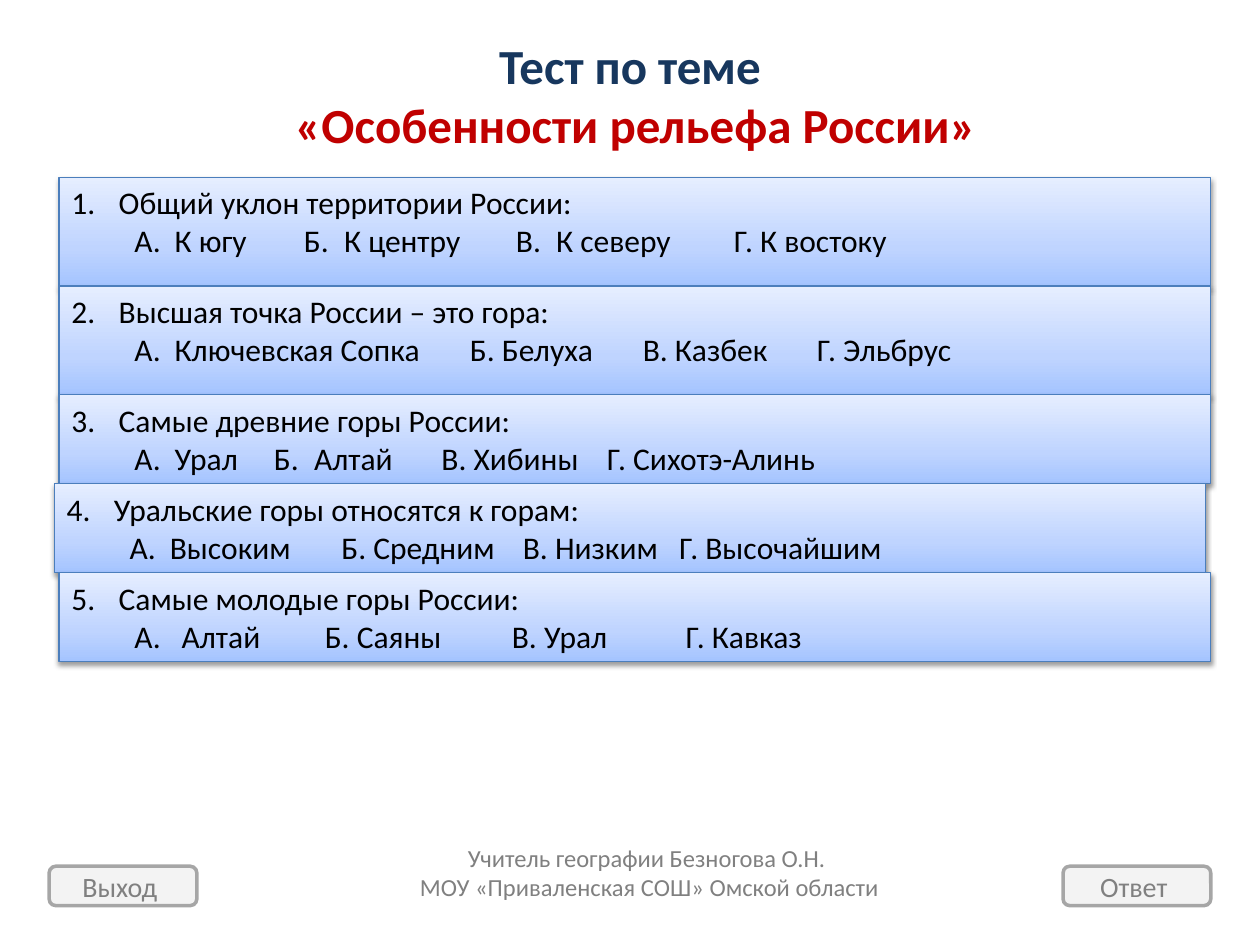
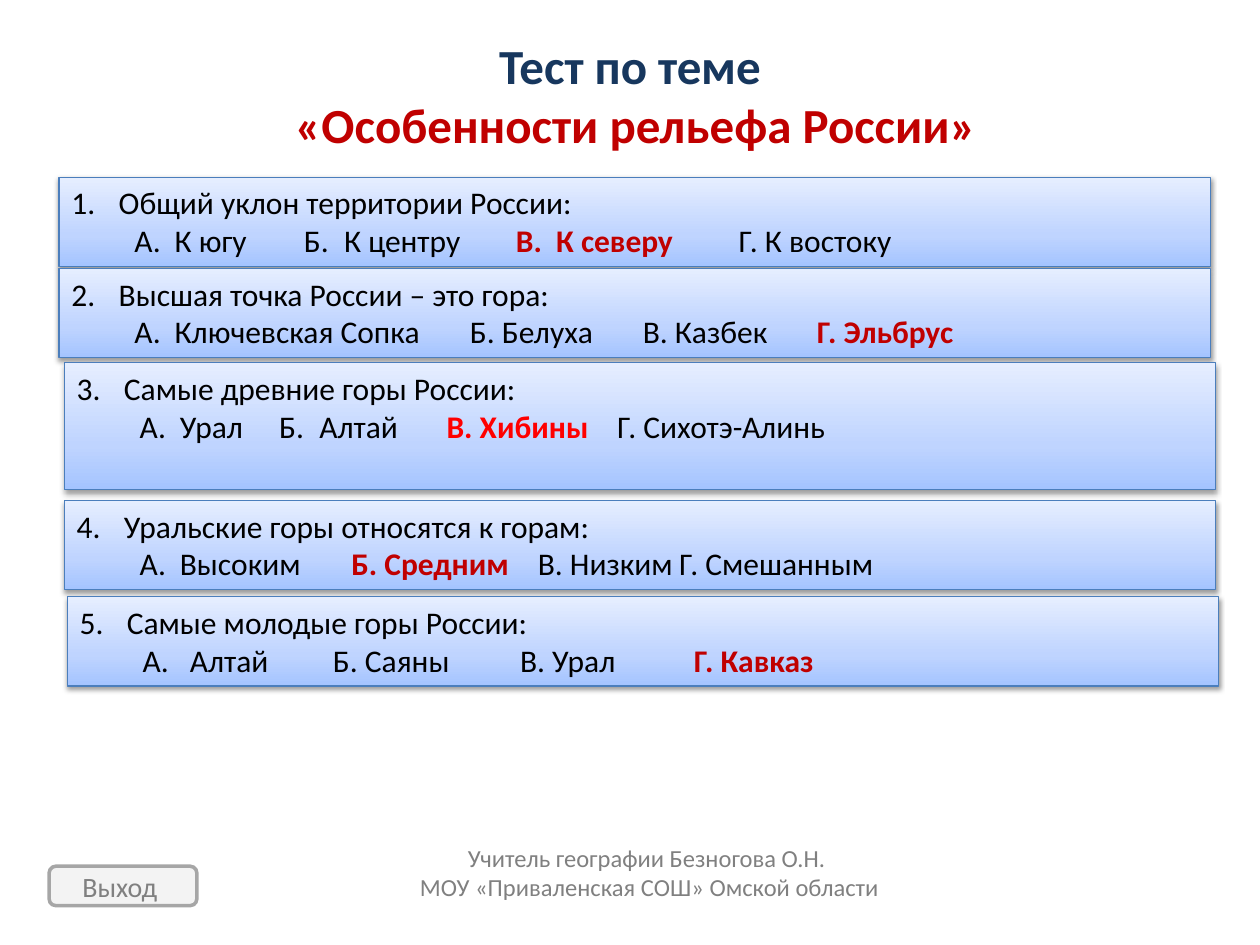
from dataclasses import dataclass, replace

from lxml import etree
from pptx import Presentation
from pptx.dml.color import RGBColor
from pptx.enum import shapes, text
from pptx.oxml import ns
from pptx.util import Pt


@dataclass(frozen=True)
class Theme:
    font: str = "Calibri"
    navy: str = "17375E"
    crimson: str = "C00000"
    red: str = "FF0000"
    ink: str = "000000"
    muted: str = "808080"
    button: str = "F2F2F2"
    button_edge: str = "A6A6A6"
    card_edge: str = "4B7EBC"
    card_stops: tuple = ((0, "A4C4FF"), (35, "BFD4FF"), (100, "E6EEFF"))
    title_size: int = 28
    question_size: int = 18
    button_size: int = 16
    footer_size: int = 14


@dataclass(frozen=True)
class Question:
    prompt: str
    options: tuple
    stops: tuple
    letter_gap: float = 23


@dataclass(frozen=True)
class Card:
    left: float
    top: float
    height: float
    correct: int | None = None
    accent: str = Theme.crimson


QUESTIONS = (
    Question("Общий уклон территории России:",
             ("А.\tК югу", "Б.\tК центру", "В.\tК северу", "Г. К востоку"),
             (36, 132.8, 254, 378.5)),
    Question("Высшая точка России – это гора:",
             ("А.\tКлючевская Сопка", "Б. Белуха", "В. Казбек", "Г. Эльбрус"),
             (36, 227.7, 326.5, 426)),
    Question("Самые древние горы России:",
             ("А.\tУрал", "Б.\tАлтай", "В. Хибины", "Г. Сихотэ-Алинь"),
             (36, 115.7, 211.4, 306)),
    Question("Уральские горы относятся к горам:",
             ("А.\tВысоким", "Б. Средним", "В. Низким", "Г. Высочайшим"),
             (36, 157, 260.7, 350)),
    Question("Самые молодые горы России:",
             ("А.\tАлтай", "Б. Саяны", "В. Урал", "Г. Кавказ"),
             (36, 144.8, 251.7, 351), 27),
)

TEST_CARDS = (
    Card(33.75, 101.25, 62.4),
    Card(33.75, 163.4, 62.4),
    Card(33.75, 225.5, 51),
    Card(31, 276.3, 51),
    Card(33.75, 327.2, 51),
)

ANSWER_CARDS = (
    Card(33.75, 101.25, 51, 2),
    Card(33.75, 153.4, 51, 3),
    Card(36.75, 207.2, 72.7, 2, Theme.red),
    Card(36.75, 286, 51, 1),
    Card(38.4, 341, 51, 3),
)

BOLD_WIDENING = 2.8


def add_xml(parent, tag, **attributes):
    return etree.SubElement(parent, ns.qn(tag), {k: str(v) for k, v in attributes.items()})


class Deck:
    def __init__(self, theme):
        self.theme = theme
        self.presentation = Presentation()
        self.presentation.slide_width = Pt(720)
        self.presentation.slide_height = Pt(540)
        self.slide = None

    def new_slide(self):
        self.slide = self.presentation.slides.add_slide(self.presentation.slide_layouts[6])

    def style(self, font, size, color, bold=False):
        font.name = self.theme.font
        font.size = Pt(size)
        font.bold = bold
        font.color.rgb = RGBColor.from_string(color)

    def text_area(self, left, top, width, height):
        area = self.slide.shapes.add_textbox(Pt(left), Pt(top), Pt(width), Pt(height))
        area.text_frame.word_wrap = True
        return area.text_frame

    def box(self, preset, left, top, width, height, edge, weight):
        shape = self.slide.shapes.add_shape(preset, Pt(left), Pt(top), Pt(width), Pt(height))
        shape.shadow.inherit = False
        shape.line.color.rgb = RGBColor.from_string(edge)
        shape.line.width = Pt(weight)
        return shape

    def title(self, topic, subject):
        heading = self.text_area(28.1, 16.6, 663.8, 74.9).paragraphs[0]
        heading.alignment = text.PP_ALIGN.CENTER
        self.style(heading.font, self.theme.title_size, self.theme.navy, True)
        heading.add_run().text = topic
        heading.add_line_break()
        subject_run = heading.add_run()
        subject_run.text = " " + subject
        self.style(subject_run.font, self.theme.title_size, self.theme.crimson, True)

    def footer(self, *lines):
        frame = self.text_area(140.4, 478.1, 461.5, 41)
        frame.text = "\n".join(lines)
        for line in frame.paragraphs:
            line.alignment = text.PP_ALIGN.CENTER
            self.style(line.font, self.theme.footer_size, self.theme.muted)

    def button(self, label, left):
        button = self.box(shapes.MSO_SHAPE.ROUNDED_RECTANGLE, left, 495, 84.4, 22.5,
                          self.theme.button_edge, 2)
        button.fill.solid()
        button.fill.fore_color.rgb = RGBColor.from_string(self.theme.button)
        fill_color = button._element.spPr.find(ns.qn("a:solidFill"))[0]
        add_xml(fill_color, "a:alpha", val=90000)
        button.text_frame.vertical_anchor = text.MSO_ANCHOR.MIDDLE
        caption = button.text_frame.paragraphs[0]
        caption.text = label
        caption.alignment = text.PP_ALIGN.CENTER
        self.style(caption.font, self.theme.button_size, self.theme.muted)

    def paint_card(self, panel):
        panel.fill.gradient()
        panel.fill.gradient_angle = 90
        properties = panel._element.spPr
        gradient = properties.find(ns.qn("a:gradFill")).find(ns.qn("a:gsLst"))
        for default_stop in list(gradient):
            gradient.remove(default_stop)
        for position, color in self.theme.card_stops:
            add_xml(add_xml(gradient, "a:gs", pos=position * 1000), "a:srgbClr", val=color)
        effects = properties.find(ns.qn("a:effectLst"))
        shadow = add_xml(effects, "a:outerShdw", blurRad=Pt(3.1), dist=Pt(1.6),
                         dir=5400000, rotWithShape=0)
        add_xml(add_xml(shadow, "a:srgbClr", val=self.theme.ink), "a:alpha", val=38000)

    def question(self, number, question, card):
        panel = self.box(shapes.MSO_SHAPE.RECTANGLE, card.left, card.top, 658.1, card.height,
                         self.theme.card_edge, 0.75)
        self.paint_card(panel)
        frame = panel.text_frame
        frame.word_wrap = True
        frame.vertical_anchor = text.MSO_ANCHOR.TOP

        prompt = frame.paragraphs[0]
        prompt.text = question.prompt
        numbering = prompt._p.get_or_add_pPr()
        numbering.set("marL", str(Pt(27)))
        numbering.set("indent", str(Pt(-27)))
        add_xml(numbering, "a:buFont", typeface=self.theme.font)
        add_xml(numbering, "a:buAutoNum", type="arabicPeriod", startAt=number)

        answers = frame.add_paragraph()
        tabs = add_xml(answers._p.get_or_add_pPr(), "a:tabLst")
        for index, (option, stop) in enumerate(zip(question.options, question.stops)):
            if card.correct is not None and index > card.correct:
                stop += BOLD_WIDENING
            add_xml(tabs, "a:tab", pos=Pt(stop), algn="l")
            if "\t" in option:
                add_xml(tabs, "a:tab", pos=Pt(stop + question.letter_gap), algn="l")
            answer = answers.add_run()
            answer.text = "\t" + option
            if index == card.correct:
                self.style(answer.font, self.theme.question_size, card.accent, True)

        for line in (prompt, answers):
            line.alignment = text.PP_ALIGN.LEFT
            self.style(line.font, self.theme.question_size, self.theme.ink)

    def test_slide(self, questions, cards, buttons):
        self.new_slide()
        for label, left in buttons:
            self.button(label, left)
        self.footer("Учитель географии Безногова О.Н. ",
                    "МОУ «Приваленская СОШ» Омской области")
        self.title("Тест по теме", "«Особенности рельефа России»")
        for number, (question, card) in enumerate(zip(questions, cards), 1):
            self.question(number, question, card)


def main():
    deck = Deck(Theme())
    exit_button = ("Выход ", 28.1)
    answer_button = ("Ответ ", 607.5)
    deck.test_slide(QUESTIONS, TEST_CARDS, (exit_button, answer_button))

    mountains = QUESTIONS[3]
    mixed_mountains = replace(mountains,
                              options=mountains.options[:3] + ("Г. Смешанным",),
                              stops=mountains.stops[:3] + (341.5,))
    answered = QUESTIONS[:3] + (mixed_mountains,) + QUESTIONS[4:]
    deck.test_slide(answered, ANSWER_CARDS, (exit_button,))
    deck.presentation.save("out.pptx")


if __name__ == "__main__":
    main()
